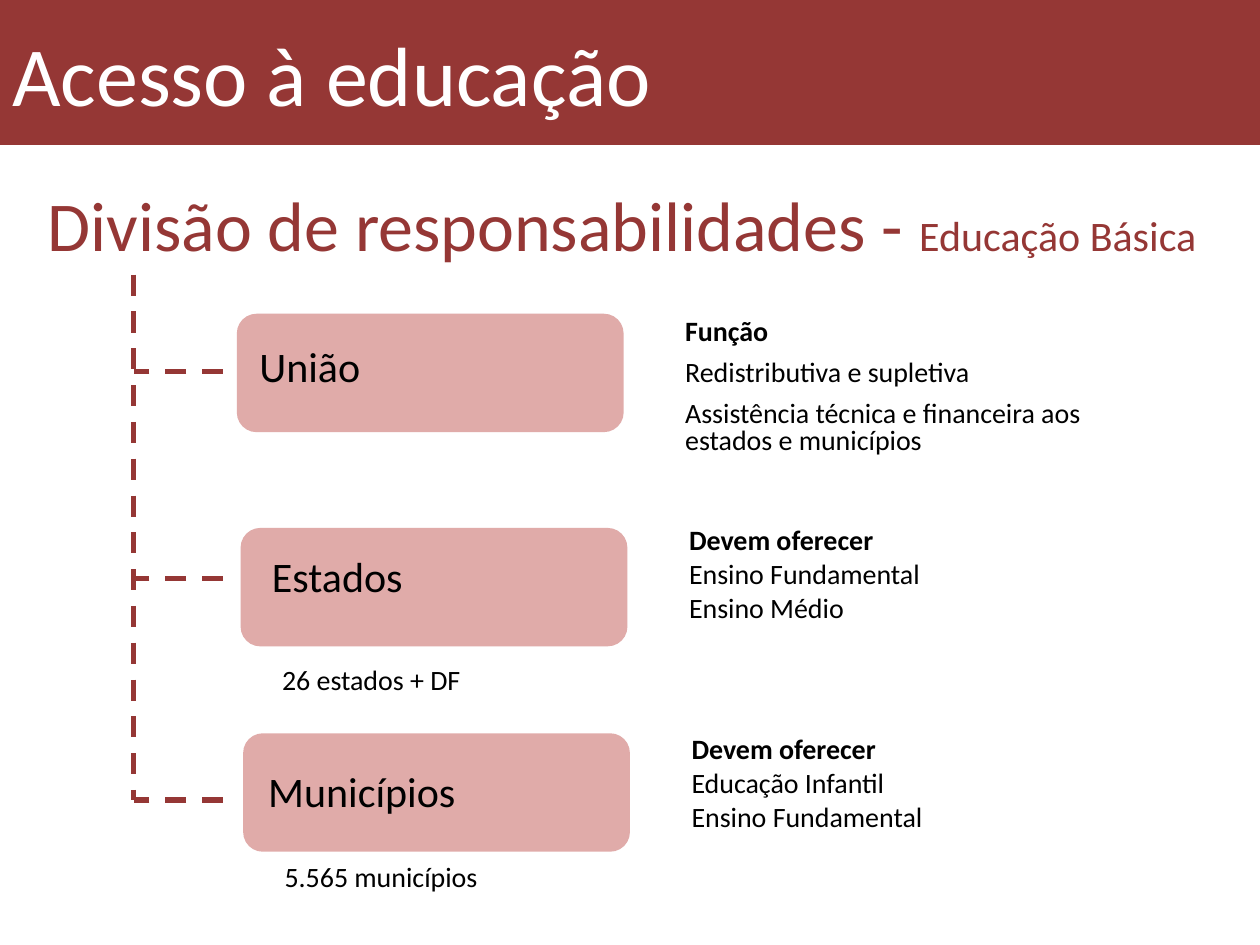
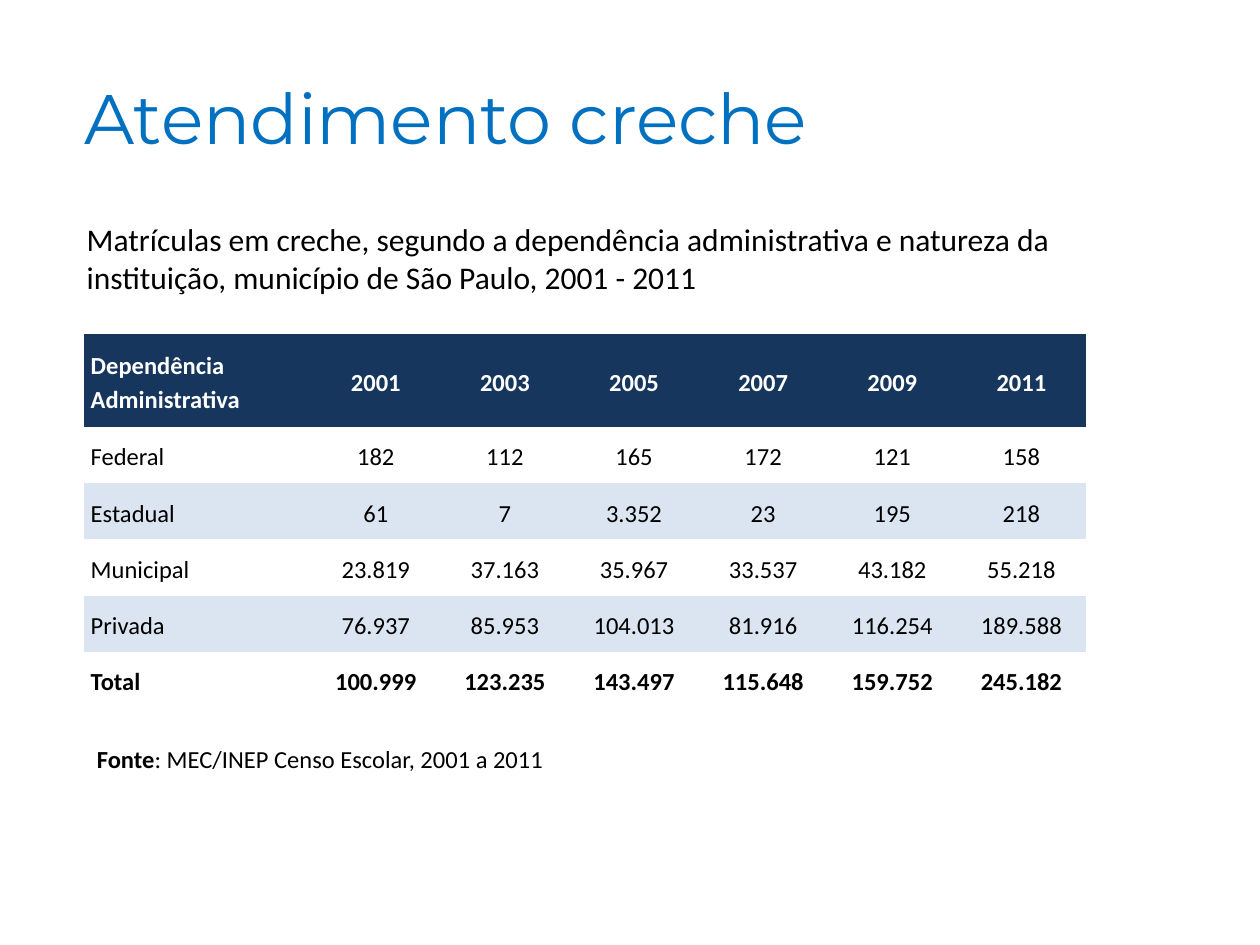
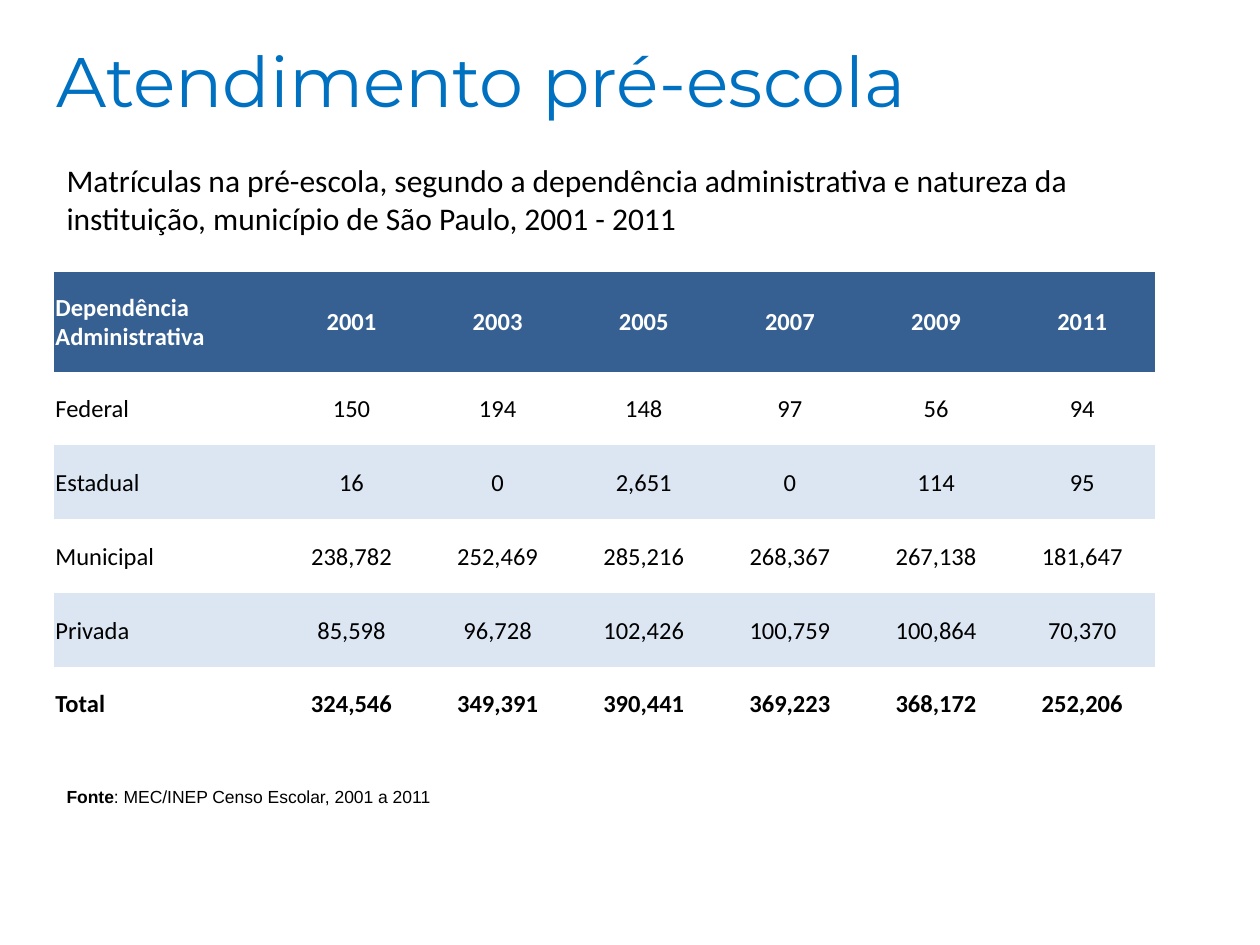
from dataclasses import dataclass

from lxml.etree import SubElement
from pptx import Presentation
from pptx.dml.color import RGBColor
from pptx.enum.dml import MSO_LINE
from pptx.enum.shapes import MSO_CONNECTOR, MSO_SHAPE
from pptx.enum.text import MSO_ANCHOR, PP_ALIGN
from pptx.oxml.ns import qn
from pptx.util import Inches, Pt


@dataclass(frozen=True)
class Theme:
    body_font: str = "Calibri"
    title_font: str = "Montserrat"
    note_font: str = "Arial"
    black: str = "000000"
    white: str = "FFFFFF"
    wine: str = "953735"
    rose: str = "D99694"
    blue: str = "0070C0"
    navy: str = "17365D"
    steel: str = "376092"
    navy_tint: str = "DBE5F1"
    steel_tint: str = "DCE6F2"
    banner: int = 48
    title: int = 40
    level: int = 24
    caption: int = 18
    detail: int = 16
    table: int = 14
    note: int = 10
    branch_line: int = 3


theme = Theme()
NO_GRID_STYLE = "{2D5ABB26-0587-4C30-8999-92F81FD0307C}"

deck = Presentation()
deck.slide_width, deck.slide_height = Inches(10), Inches(7.5)
blank = deck.slide_layouts[6]
COLUMN, ROW = deck.slide_width / 100, deck.slide_height / 75


def area(left, top, width, height):
    """Turn grid columns and rows into slide lengths."""
    return [round(n * unit) for n, unit in zip((left, top, width, height), (COLUMN, ROW) * 2)]


def write(frame, *paragraphs, size, font=theme.body_font, color=theme.black, bold=False,
          align=PP_ALIGN.LEFT, anchor=MSO_ANCHOR.TOP, line_spacing=None, gap=0):
    """Fill a frame; a paragraph is a string or a list of (text, size, bold) runs."""
    frame.word_wrap = True
    frame.vertical_anchor = anchor
    for index, content in enumerate(paragraphs):
        paragraph = frame.paragraphs[0] if index == 0 else frame.add_paragraph()
        paragraph.alignment = align
        if line_spacing:
            paragraph.line_spacing = line_spacing
        if index:
            paragraph.space_before = Pt(gap)
        runs = [(content, size, bold)] if isinstance(content, str) else content
        for text, run_size, run_bold in runs:
            run = paragraph.add_run()
            run.text = text
            run.font.name, run.font.size, run.font.bold = font, Pt(run_size), run_bold
            run.font.color.rgb = RGBColor.from_string(color)


# Slide 1: who is responsible for basic education
slide = deck.slides.add_slide(blank)
heading = slide.shapes.add_textbox(*area(2.8, 13.9, 97.2, 7.7))
write(heading.text_frame,
      [("Divisão de responsabilidades - ", theme.title, False),
       ("Educação Básica", theme.level, False)],
      size=theme.title, color=theme.wine)

TRUNK, BRANCH_END, TRUNK_TOP = 10.6, 17.7, 21.8
branch_rows = [63.5, 45.9, 29.5]
tree = [(TRUNK, TRUNK_TOP, TRUNK, branch_rows[0])]
tree += [(BRANCH_END, row, TRUNK, row) for row in branch_rows]
for ends in tree:
    branch = slide.shapes.add_connector(MSO_CONNECTOR.STRAIGHT, *area(*ends))
    branch.line.color.rgb = RGBColor.from_string(theme.wine)
    branch.line.width = Pt(theme.branch_line)
    branch.line.dash_style = MSO_LINE.DASH
    SubElement(branch._element.spPr, qn("a:effectLst"))

# level, place of its name, card corner, note with its place, duties with their place
levels = [
    ("União", (19.6, 26.5), (18.8, 24.9), None, None,
     ["Função", "Redistributiva e supletiva",
      "Assistência técnica e financeira aos estados e municípios"], (53.4, 24.9, 38.6, 12.3), 0.8),
    ("Estados", (20.6, 43.2), (19.1, 41.9), "26 estados + DF", (21.4, 52.1),
     ["Devem oferecer", "Ensino Fundamental", "Ensino Médio"], (53.7, 41.9, 29.9, 8.7), 0.6),
    ("Municípios", (20.3, 60.3), (19.3, 58.2), "5.565 municípios", (21.6, 67.7),
     ["Devem oferecer", "Educação Infantil", "Ensino Fundamental"], (53.9, 58.5, 29.9, 8.7), 0.6),
]
for level, level_at, card_at, note, note_at, duties, duties_area, spacing in levels:
    card = slide.shapes.add_shape(MSO_SHAPE.ROUNDED_RECTANGLE, *area(*card_at, 30.7, 9.4))
    card.shadow.inherit = False
    card.fill.solid()
    card.fill.fore_color.rgb = RGBColor.from_string(theme.rose)
    tint = card._element.spPr.find(qn("a:solidFill"))[0]
    SubElement(tint, qn("a:alpha"), val="80000")
    card.line.fill.background()
    level_name = slide.shapes.add_textbox(*area(*level_at, 29.9, 5))
    write(level_name.text_frame, level, size=theme.level)
    if note:
        count = slide.shapes.add_textbox(*area(*note_at, 22.8, 3.7))
        write(count.text_frame, note, size=theme.detail)
    duty_list = slide.shapes.add_textbox(*area(*duties_area))
    write(duty_list.text_frame, [(duties[0], theme.detail, True)], *duties[1:],
          size=theme.detail, line_spacing=spacing, gap=8)

banner = slide.shapes.add_shape(MSO_SHAPE.RECTANGLE, *area(0, 0, 100, 11.5))
banner.shadow.inherit = False
banner.fill.solid()
banner.fill.fore_color.rgb = RGBColor.from_string(theme.wine)
banner.line.fill.background()
write(banner.text_frame, "Acesso à educação", size=theme.banner, color=theme.white,
      anchor=MSO_ANCHOR.MIDDLE)

# Slides 2 and 3: enrolment tables
header = ["Dependência Administrativa", "2001", "2003", "2005", "2007", "2009", "2011"]
enrolments = [
    dict(title="Atendimento creche", title_area=(5.7, 3, 90, 12.5),
         caption="Matrículas em creche, segundo a dependência administrativa e natureza da "
                 "instituição, município de São Paulo, 2001 - 2011",
         caption_area=(5.9, 17, 87.4, 7.1),
         table_at=(6.7, 26.5), first_column=18, year_column=10.25, header_row=7.4, body_row=4.46,
         side_inset=0.5, top_inset=0, line_spacing=1.15,
         header_fill=theme.navy, band_fill=theme.navy_tint,
         source_area=(6.7, 58.6, 57.1, 5.7), source_font=theme.body_font, source_size=theme.table,
         rows=["Federal 182 112 165 172 121 158",
               "Estadual 61 7 3.352 23 195 218",
               "Municipal 23.819 37.163 35.967 33.537 43.182 55.218",
               "Privada 76.937 85.953 104.013 81.916 116.254 189.588",
               "Total 100.999 123.235 143.497 115.648 159.752 245.182"]),
    dict(title="Atendimento pré-escola", title_area=(3.5, 1.3, 90, 10.1),
         caption="Matrículas na pré-escola, segundo a dependência administrativa e natureza da "
                 "instituição, município de São Paulo, 2001 - 2011",
         caption_area=(4.3, 12.3, 89, 7.1),
         table_at=(4.3, 21.6), first_column=17.8, year_column=11.6, header_row=7.9, body_row=5.86,
         side_inset=0.1, top_inset=0.1, line_spacing=None,
         header_fill=theme.steel, band_fill=theme.steel_tint,
         source_area=(4.3, 61.9, 32.7, 2.7), source_font=theme.note_font, source_size=theme.note,
         rows=["Federal 150 194 148 97 56 94",
               "Estadual 16 0 2,651 0 114 95",
               "Municipal 238,782 252,469 285,216 268,367 267,138 181,647",
               "Privada 85,598 96,728 102,426 100,759 100,864 70,370",
               "Total 324,546 349,391 390,441 369,223 368,172 252,206"]),
]
for enrolment in enrolments:
    slide = deck.slides.add_slide(blank)
    title = slide.shapes.add_textbox(*area(*enrolment["title_area"]))
    write(title.text_frame, enrolment["title"], size=theme.title, font=theme.title_font,
          color=theme.blue, anchor=MSO_ANCHOR.MIDDLE)

    rows = [header] + [line.split() for line in enrolment["rows"]]
    widths = [enrolment["first_column"]] + [enrolment["year_column"]] * (len(header) - 1)
    heights = [enrolment["header_row"]] + [enrolment["body_row"]] * (len(rows) - 1)
    frame = slide.shapes.add_table(
        len(rows), len(header), *area(*enrolment["table_at"], sum(widths), sum(heights)))
    table = frame.table
    table._tbl.tblPr.find(qn("a:tableStyleId")).text = NO_GRID_STYLE
    for column, width in zip(table.columns, widths):
        column.width = round(width * COLUMN)
    for row, height in zip(table.rows, heights):
        row.height = round(height * ROW)

    for r, values in enumerate(rows):
        for c, value in enumerate(values):
            cell = table.cell(r, c)
            cell.margin_left = cell.margin_right = round(enrolment["side_inset"] * COLUMN)
            cell.margin_top, cell.margin_bottom = round(enrolment["top_inset"] * ROW), 0
            cell.vertical_anchor = MSO_ANCHOR.MIDDLE
            if r in (0, 2, 4):
                cell.fill.solid()
                shade = enrolment["band_fill"] if r else enrolment["header_fill"]
                cell.fill.fore_color.rgb = RGBColor.from_string(shade)
            else:
                cell.fill.background()
            write(cell.text_frame, value, size=theme.table,
                  color=theme.black if r else theme.white, bold=r in (0, len(rows) - 1),
                  align=PP_ALIGN.CENTER if c else PP_ALIGN.LEFT,
                  line_spacing=enrolment["line_spacing"])

    caption = slide.shapes.add_textbox(*area(*enrolment["caption_area"]))
    write(caption.text_frame, enrolment["caption"], size=theme.caption)
    source = slide.shapes.add_textbox(*area(*enrolment["source_area"]))
    source_size = enrolment["source_size"]
    write(source.text_frame,
          [("Fonte", source_size, True),
           (": MEC/INEP Censo Escolar, 2001 a 2011", source_size, False)],
          size=source_size, font=enrolment["source_font"])

deck.save("out.pptx")
